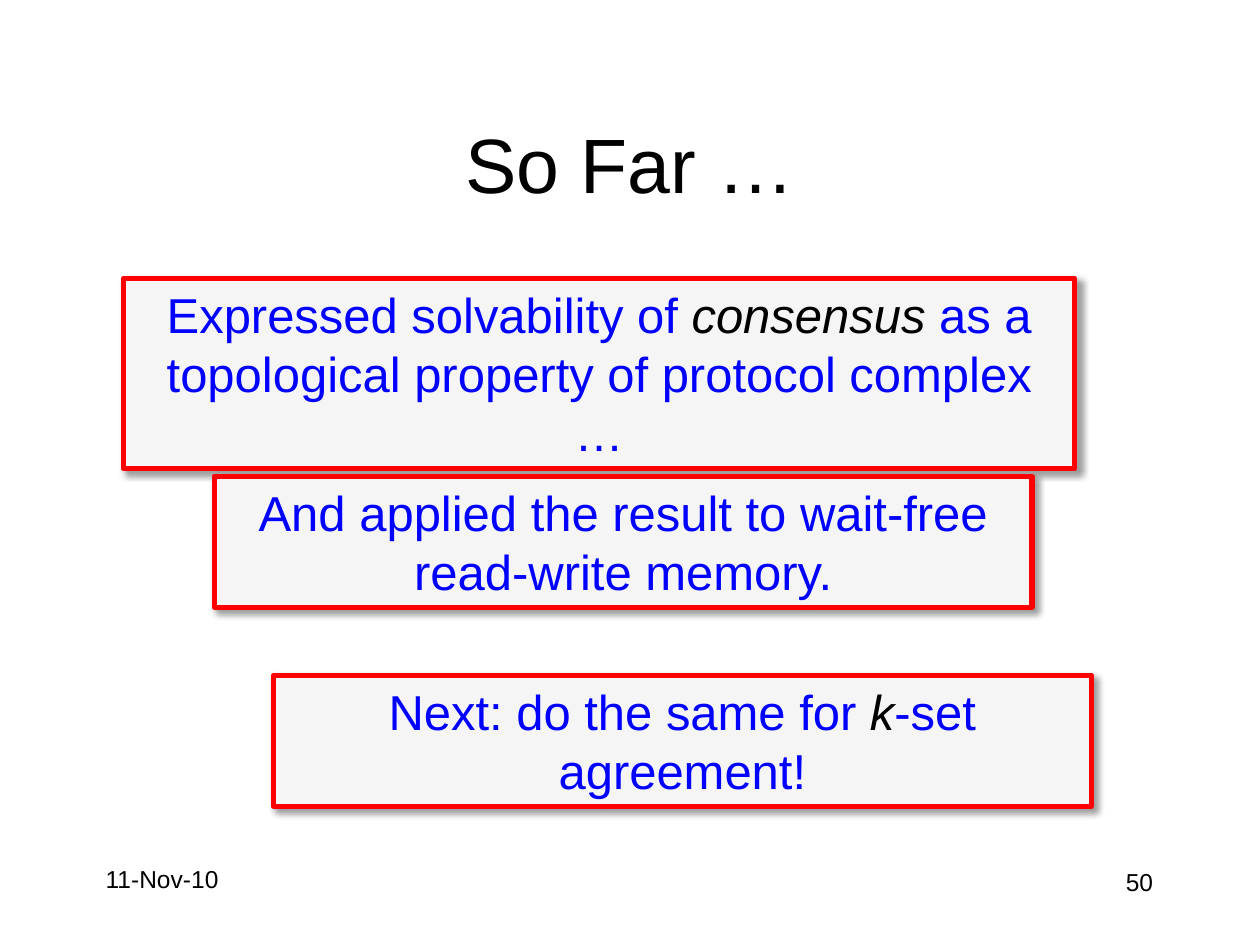
from lxml.etree import SubElement
from pptx import Presentation
from pptx.dml.color import RGBColor
from pptx.enum.shapes import MSO_SHAPE
from pptx.enum.text import MSO_ANCHOR, MSO_AUTO_SIZE, PP_ALIGN
from pptx.oxml import parse_xml
from pptx.oxml.ns import nsdecls, qn
from pptx.util import Inches, Pt

BLACK = RGBColor(0x00, 0x00, 0x00)
WHITE = RGBColor(0xFF, 0xFF, 0xFF)
RED = RGBColor(0xFF, 0x00, 0x00)
BLUE = RGBColor(0x00, 0x00, 0xFF)

SHADOW = (
    f'<a:effectLst {nsdecls("a")}>'
    f'<a:outerShdw blurRad="{Pt(4)}" dist="{Pt(3)}" dir="2700000" algn="tl" rotWithShape="0">'
    '<a:srgbClr val="000000"><a:alpha val="40000"/></a:srgbClr>'
    '</a:outerShdw></a:effectLst>'
)


def add_span(para, text, size, color=BLACK, italic=False):
    span = para.add_run()
    span.text = text
    span.font.name = "Arial"
    span.font.size = Pt(size)
    span.font.color.rgb = color
    span.font.italic = italic


class SlideBuilder:
    def __init__(self, page, font="Arial"):
        self.page = page
        self.font = font

    def title(self, text, left, top, width, height):
        box = self.page.shapes.title
        box.left, box.top = Inches(left), Inches(top)
        box.width, box.height = Inches(width), Inches(height)
        box.text_frame.vertical_anchor = MSO_ANCHOR.MIDDLE
        para = box.text_frame.paragraphs[0]
        para.alignment = PP_ALIGN.CENTER
        add_span(para, text, 44)

    def footer(self, text, left, top, align):
        box = self.page.shapes.add_textbox(
            Inches(left), Inches(top), Inches(2.08), Inches(0.5))
        box.text_frame.word_wrap = True
        para = box.text_frame.paragraphs[0]
        para.alignment = align
        add_span(para, text, 14)

    def callout(self, pieces, left, top, width, height):
        """Add a framed box; every second piece of text is emphasised."""
        box = self.page.shapes.add_shape(
            MSO_SHAPE.RECTANGLE,
            Inches(left), Inches(top), Inches(width), Inches(height))
        box.fill.solid()
        box.fill.fore_color.rgb = WHITE
        fill_color = box.fill._xPr.find(qn("a:solidFill"))[0]
        SubElement(fill_color, qn("a:alpha")).set("val", "90000")
        box.line.color.rgb = RED
        box.line.width = Pt(3)
        box._element.spPr.append(parse_xml(SHADOW))

        frame = box.text_frame
        frame.word_wrap = True
        frame.auto_size = MSO_AUTO_SIZE.SHAPE_TO_FIT_TEXT
        frame.vertical_anchor = MSO_ANCHOR.TOP
        para = frame.paragraphs[0]
        para.alignment = PP_ALIGN.CENTER
        for index, text in enumerate(pieces):
            emphasised = index % 2 == 1
            add_span(para, text, 28, color=BLACK if emphasised else BLUE,
                     italic=emphasised)


def main():
    deck = Presentation()
    deck.slide_width, deck.slide_height = Inches(10), Inches(7.5)
    builder = SlideBuilder(deck.slides.add_slide(deck.slide_layouts[5]))

    builder.title("So Far …", 0.75, 0.67, 8.5, 1.25)
    builder.footer("11-Nov-10", 0.74, 6.81, PP_ALIGN.LEFT)
    builder.footer("50", 7.17, 6.83, PP_ALIGN.RIGHT)
    builder.callout(
        ["Expressed solvability of ", "consensus",
         " as a topological property of protocol complex …"],
        0.98, 2.21, 7.55, 1.51)
    builder.callout(
        ["And applied the result to wait-free read-write memory."],
        1.7, 3.78, 6.49, 1.04)
    builder.callout(
        ["Next: do the same for ", "k", "-set agreement!"],
        2.17, 5.36, 6.49, 1.04)
    deck.save("out.pptx")


if __name__ == "__main__":
    main()
